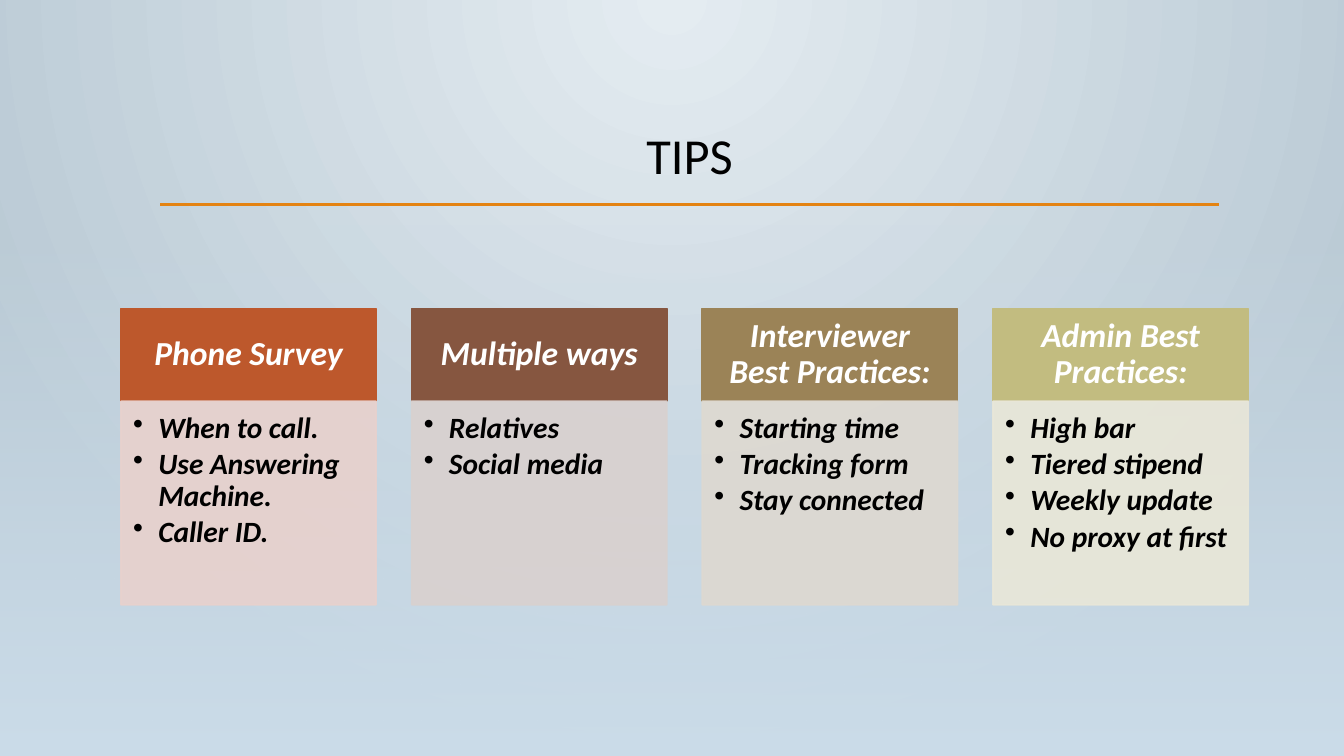
from lxml import etree
from pptx import Presentation
from pptx.dml.color import RGBColor
from pptx.enum.shapes import MSO_CONNECTOR, MSO_SHAPE
from pptx.enum.text import MSO_ANCHOR, PP_ALIGN
from pptx.oxml.ns import nsdecls, qn
from pptx.util import Inches, Pt

RECT = MSO_SHAPE.RECTANGLE
STRAIGHT = MSO_CONNECTOR.STRAIGHT
TOP, MIDDLE = MSO_ANCHOR.TOP, MSO_ANCHOR.MIDDLE
LEFT, CENTER = PP_ALIGN.LEFT, PP_ALIGN.CENTER

FONT = "Calibri"
SLIDE_W, SLIDE_H = 13.33, 7.5
CARDS_LEFT, CARDS_RIGHT, CARD_W = 1.2, 12.38, 2.53
HEAD_TOP, HEAD_H, BODY_H = 3.06, 0.92, 2.02
INDENT = 0.25

GLOW_STOPS = [(0, "E4ECF1", 100), (100, "B9C9D4", 100)]
GLOW_SHAPE = ('<a:path {} path="circle"><a:fillToRect l="43000" r="43000" '
              'b="100000"/></a:path>')
HAZE_STOPS = [(0, "CCDDEA", 0), (100, "CCDDEA", 100)]
HAZE_SHAPE = '<a:lin {} ang="5400000" scaled="0"/>'

CARDS = [
    ("Phone Survey", "BD582C", "E8D1CD",
     ["When to call.", "Use Answering Machine.", "Caller ID."]),
    ("Multiple ways", "865640", "D9D1CF",
     ["Relatives", "Social media"]),
    ("Interviewer Best Practices:", "9B8357", "DED9D1",
     ["Starting time", "Tracking form", "Stay connected"]),
    ("Admin Best Practices:", "C2BC80", "E9E7D8",
     ["High bar", "Tiered stipend", "Weekly update", "No proxy at first"]),
]


def rgb(value):
    return RGBColor.from_string(value)


def set_alpha(color, percent):
    alpha = etree.SubElement(color, qn("a:alpha"))
    alpha.set("val", str(percent * 1000))


def set_gradient(fill, element, stops, direction):
    fill.gradient()
    grad = element.find(".//" + qn("a:gradFill"))
    for child in list(grad):
        grad.remove(child)
    stop_list = etree.SubElement(grad, qn("a:gsLst"))
    for position, value, alpha in stops:
        gs = etree.SubElement(stop_list, qn("a:gs"), pos=str(position * 1000))
        color = etree.SubElement(gs, qn("a:srgbClr"), val=value)
        if alpha < 100:
            set_alpha(color, alpha)
    grad.append(etree.fromstring(direction.format(nsdecls("a"))))


def add_rect(s, x, y, w, h):
    sp = s.shapes.add_shape(RECT, Inches(x), Inches(y), Inches(w), Inches(h))
    sp.shadow.inherit = False
    return sp


def add_gradient_rect(s, y, h, stops, direction):
    sp = add_rect(s, 0, y, SLIDE_W, h)
    sp.line.fill.background()
    set_gradient(sp.fill, sp.element, stops, direction)


def add_panel(s, x, y, w, h, color, alpha=100):
    sp = add_rect(s, x, y, w, h)
    sp.fill.solid()
    sp.fill.fore_color.rgb = rgb(color)
    sp.line.color.rgb = rgb(color)
    sp.line.width = Pt(1.25)
    if alpha < 100:
        for node in sp.element.spPr.iter(qn("a:srgbClr")):
            set_alpha(node, alpha)
    return sp


def add_rule(s, x1, x2, y, color, width):
    line = s.shapes.add_connector(STRAIGHT, Inches(x1), Inches(y), Inches(x2), Inches(y))
    line.line.color.rgb = rgb(color)
    line.line.width = Pt(width)
    etree.SubElement(line.element.spPr, qn("a:effectLst"))


def add_bullet(p):
    pPr = p._p.get_or_add_pPr()
    pPr.set("marL", str(Inches(INDENT)))
    pPr.set("indent", str(-Inches(INDENT)))
    etree.SubElement(pPr, qn("a:buChar"), char="•")


def write_text(sp, lines, size, color, strong=True, align=LEFT, anchor=TOP,
               insets=(0.1, 0.05, 0.1, 0.05), spacing=0.9, after=0, bullets=False):
    tf = sp.text_frame
    tf.word_wrap = True
    tf.vertical_anchor = anchor
    tf.margin_left, tf.margin_top, tf.margin_right, tf.margin_bottom = map(Inches, insets)
    for i, line in enumerate(lines):
        p = tf.add_paragraph() if i else tf.paragraphs[0]
        if bullets:
            add_bullet(p)
        p.alignment = align
        p.line_spacing = spacing
        p.space_after = Pt(after)
        r = p.add_run()
        r.text = line
        r.font.name = FONT
        r.font.size = Pt(size)
        r.font.bold = r.font.italic = strong
        r.font.color.rgb = rgb(color)


def add_card(s, x, heading, head_color, body_color, tips):
    head = add_panel(s, x, HEAD_TOP, CARD_W, HEAD_H, head_color)
    write_text(head, [heading], 24, "FFFFFF", align=CENTER, anchor=MIDDLE,
               insets=(0.19, 0.11, 0.19, 0.11))
    body = add_panel(s, x, HEAD_TOP + HEAD_H, CARD_W, BODY_H, body_color, alpha=90)
    write_text(body, tips, 21, "000000", insets=(0.12, 0.12, 0.16, 0.18),
               after=3.15, bullets=True)


def main():
    prs = Presentation()
    prs.slide_width, prs.slide_height = Inches(SLIDE_W), Inches(SLIDE_H)
    s = prs.slides.add_slide(prs.slide_layouts[6])

    set_gradient(s.background.fill, s.element, GLOW_STOPS, GLOW_SHAPE)
    add_gradient_rect(s, 0, SLIDE_H, GLOW_STOPS, GLOW_SHAPE)
    title = s.shapes.add_textbox(Inches(1.59), Inches(0.88), Inches(10.5), Inches(1.15))
    write_text(title, ["TIPS"], 36, "000000", strong=False, align=CENTER, spacing=1.5)
    add_rule(s, 1.59, 12.09, 2.03, "E48312", 2.5)
    add_gradient_rect(s, 2.21, 5.29, HAZE_STOPS, HAZE_SHAPE)

    pitch = (CARDS_RIGHT - CARDS_LEFT - CARD_W) / (len(CARDS) - 1)
    for i, card in enumerate(CARDS):
        add_card(s, CARDS_LEFT + i * pitch, *card)

    prs.save("out.pptx")


if __name__ == "__main__":
    main()
